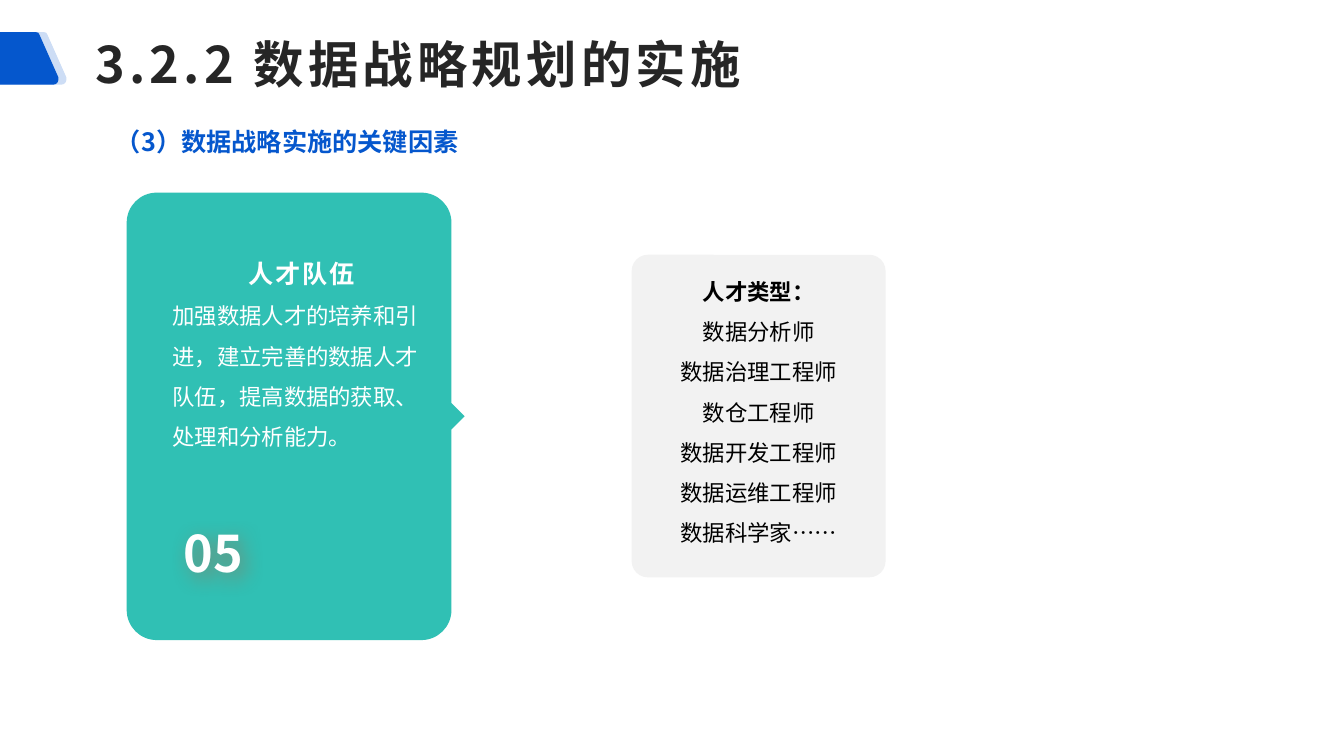
import pptx
import pptx.util
import pptx.dml.color
import pptx.enum.shapes
import pptx.enum.text
import pptx.oxml.ns

Pt = pptx.util.Pt
RGBColor = pptx.dml.color.RGBColor
Align = pptx.enum.text.PP_ALIGN
Anchor = pptx.enum.text.MSO_ANCHOR

BLUE = RGBColor(0x05, 0x57, 0xCD)
TEAL = RGBColor(0x30, 0xC0, 0xB4)
PALE = RGBColor(0xF2, 0xF2, 0xF2)
INK = RGBColor(0x26, 0x26, 0x26)
BLACK = RGBColor(0, 0, 0)
WHITE = RGBColor(255, 255, 255)
GLOW = RGBColor(0xC0, 0x50, 0x30)
SANS = "Noto Sans CJK SC"

TITLE = ["3.2.2 数据战略规划的实施"]
SUBTITLE = ["（3）数据战略实施的关键因素"]
CARD = ["人才队伍", "加强数据人才的培养和引进，建立完善的数据人才队伍，提高数据的获取、处理和分析能力。"]
NUMBER = ["05"]
TALENT = ["人才类型：", "数据分析师", "数据治理工程师", "数仓工程师",
          "数据开发工程师", "数据运维工程师", "数据科学家……"]

TITLE_FONT = {"name": SANS, "size": Pt(36), "bold": True, "color": INK, "spacing": 300}
SUBTITLE_FONT = {"name": SANS, "size": Pt(18), "bold": True, "color": BLUE}
CARD_HEAD_FONT = {**SUBTITLE_FONT, "color": WHITE, "spacing": 130}
CARD_FONT = {"name": "Times New Roman", "size": Pt(16), "bold": False, "color": WHITE}
NUMBER_FONT = {"name": SANS, "size": Pt(36), "bold": True, "color": WHITE}
TALENT_FONT = {"name": "Arial", "size": Pt(16), "bold": False, "color": BLACK}
TALENT_HEAD_FONT = {**TALENT_FONT, "bold": True}

CENTRED = {"alignment": Align.CENTER, "line_spacing": 1.5}
LEFT = {"alignment": Align.LEFT, "line_spacing": 1.5}
JUSTIFIED = {"alignment": Align.JUSTIFY, "line_spacing": 1.5}

BAND_TOP = 22.9
BAND_LEFTS = [(-12.1, 20), (-17.8, 100)]
BAND = [(0.5, 32.4), (13.7, 2.2), (14.4, 0.7, 15.1, 0, 16.6, 0), (43.2, 0),
        (44.6, 0, 46.1, 0.7, 46.1, 2.2), (59.5, 32.4),
        (60, 34.6, 58.8, 37.6, 56, 37.6), (3.6, 37.6),
        (0.7, 37.6, 0, 34.6, 0.5, 32.4)]

CARD_LEFT, CARD_TOP, CARD_WIDTH, CARD_HEIGHT = 90.5, 137.6, 232, 319.6
CORNER, POINTER, HANDLE = 21.5, 9.4, 9.6


def card_outline():
    right, bottom, middle = CARD_WIDTH, CARD_HEIGHT, CARD_HEIGHT / 2
    return [(CORNER, 0), (right - CORNER, 0),
            (right - HANDLE, 0, right, HANDLE, right, CORNER),
            (right, middle - POINTER), (right + POINTER, middle), (right, middle + POINTER),
            (right, bottom - CORNER),
            (right, bottom - HANDLE, right - HANDLE, bottom, right - CORNER, bottom),
            (CORNER, bottom), (HANDLE, bottom, 0, bottom - HANDLE, 0, bottom - CORNER),
            (0, CORNER), (0, HANDLE, HANDLE, 0, CORNER, 0)]


def paint(shape, color):
    shape.shadow.inherit = False
    shape.fill.solid()
    shape.fill.fore_color.rgb = color
    shape.line.fill.background()


def add_child(parent, tag, **attributes):
    element = parent.makeelement(pptx.oxml.ns.qn(tag), attributes)
    parent.append(element)
    return element


def add_outline(slide, outline, left, top, color):
    points = [(Pt(left + part[i]), Pt(top + part[i + 1]))
              for part in outline for i in range(0, len(part), 2)]
    builder = slide.shapes.build_freeform(*points[0])
    builder.add_line_segments(points[1:], close=True)
    shape = builder.convert_to_shape()
    segments = iter(shape._element.findall(".//" + pptx.oxml.ns.qn("a:lnTo")))
    for part in outline[1:]:
        segment = next(segments)
        if len(part) == 6:
            segment.tag = pptx.oxml.ns.qn("a:cubicBezTo")
            for follower in (next(segments), next(segments)):
                segment.append(follower[0])
                follower.getparent().remove(follower)
    paint(shape, color)
    return shape


def write(shape, lines, formats, anchor, insets, wrap=True):
    frame = shape.text_frame
    left, top, right, bottom = map(Pt, insets)
    settings = {"word_wrap": wrap, "auto_size": pptx.enum.text.MSO_AUTO_SIZE.NONE,
                "vertical_anchor": anchor, "margin_left": left, "margin_top": top,
                "margin_right": right, "margin_bottom": bottom}
    for key, value in settings.items():
        setattr(frame, key, value)
    for index, line in enumerate(lines):
        layout, style = formats[min(index, len(formats) - 1)]
        paragraph = frame.add_paragraph() if index else frame.paragraphs[0]
        for key, value in layout.items():
            setattr(paragraph, key, value)
        run = paragraph.add_run()
        run.text = line
        for key, value in style.items():
            if key == "color":
                run.font.color.rgb = value
            elif key == "spacing":
                run._r.get_or_add_rPr().set("spc", str(value))
            else:
                setattr(run.font, key, value)
        if style["name"] == SANS:
            add_child(run._r.get_or_add_rPr(), "a:ea", typeface=SANS)


def add_box(slide, left, top, width, height):
    return slide.shapes.add_textbox(Pt(left), Pt(top), Pt(width), Pt(height))


def main():
    presentation = pptx.Presentation()
    presentation.slide_width, presentation.slide_height = Pt(960), Pt(540)
    slide = presentation.slides.add_slide(presentation.slide_layouts[5])

    for left, opacity in BAND_LEFTS:
        band = add_outline(slide, BAND, left, BAND_TOP, BLUE)
        if opacity < 100:
            color = band._element.spPr.find(".//" + pptx.oxml.ns.qn("a:srgbClr"))
            add_child(color, "a:alpha", val=str(opacity * 1000))

    card = add_outline(slide, card_outline(), CARD_LEFT, CARD_TOP, TEAL)
    write(card, CARD, [(CENTRED, CARD_HEAD_FONT), (LEFT, CARD_FONT)],
          Anchor.TOP, (32.7, 36.4, 24.7, 64.8))

    number = add_box(slide, 119.5, 367.2, 65.5, 54.7)
    write(number, NUMBER, [({"alignment": Align.CENTER}, NUMBER_FONT)],
          Anchor.MIDDLE, (0, 0, 0, 0), wrap=False)
    effects = add_child(number._element.spPr, "a:effectLst")
    shadow = add_child(effects, "a:outerShdw", blurRad=str(Pt(15)), dist=str(Pt(5)),
                       dir="2700000", algn="tl", rotWithShape="0")
    add_child(add_child(shadow, "a:srgbClr", val=str(GLOW)), "a:alpha", val="50000")

    talent = slide.shapes.add_shape(pptx.enum.shapes.MSO_SHAPE.ROUNDED_RECTANGLE,
                                    Pt(451.2), Pt(182), Pt(181.4), Pt(230.4))
    talent.adjustments[0] = 0.064
    paint(talent, PALE)
    write(talent, TALENT, [(CENTRED, TALENT_HEAD_FONT), (CENTRED, TALENT_FONT)],
          Anchor.TOP, (7.2, 3.6, 7.2, 3.6))

    title = slide.shapes.title
    for key, value in zip(("left", "top", "width", "height"), (63, 18.7, 815.8, 53.3)):
        setattr(title, key, Pt(value))
    write(title, TITLE, [({"alignment": Align.LEFT}, TITLE_FONT)],
          Anchor.MIDDLE, (5, 2.2, 5, 2.2))

    subtitle = add_box(slide, 39.8, 76, 480.2, 39.6)
    write(subtitle, SUBTITLE, [(JUSTIFIED, SUBTITLE_FONT)], Anchor.TOP, (7.2, 3.6, 7.2, 3.6))
    subtitle.text_frame.paragraphs[0]._p.get_or_add_pPr().set("indent", str(Pt(36)))

    presentation.save("out.pptx")


if __name__ == "__main__":
    main()
